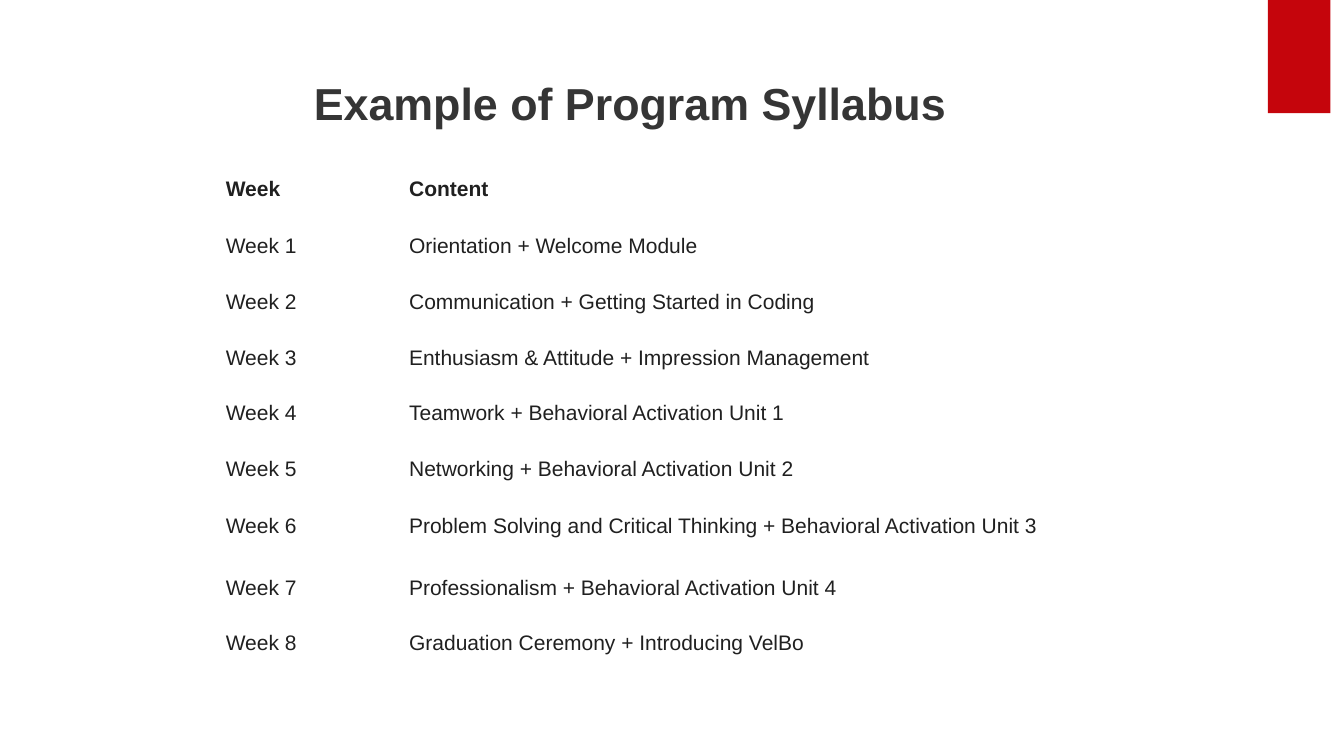
from pptx import Presentation
from pptx.dml.color import RGBColor
from pptx.enum.shapes import MSO_SHAPE
from pptx.enum.text import MSO_ANCHOR, PP_ALIGN
from pptx.util import Cm, Pt

RECTANGLE = MSO_SHAPE.RECTANGLE
BOTTOM = MSO_ANCHOR.BOTTOM
CENTER = PP_ALIGN.CENTER
RED = RGBColor(0xC5, 0x05, 0x0C)
TITLE_GRAY = RGBColor(0x35, 0x35, 0x35)
TEXT_GRAY = RGBColor(0x20, 0x20, 0x20)

CONTENTS = [
    "Orientation + Welcome Module",
    "Communication + Getting Started in Coding",
    "Enthusiasm & Attitude + Impression Management",
    "Teamwork + Behavioral Activation Unit 1",
    "Networking + Behavioral Activation Unit 2",
    "Problem Solving and Critical Thinking + Behavioral Activation Unit 3",
    "Professionalism + Behavioral Activation Unit 4",
    "Graduation Ceremony + Introducing VelBo",
]
ROWS = [("Week", "Content")]
ROWS += [(f"Week {n}", content) for n, content in enumerate(CONTENTS, 1)]
COLUMN_WIDTHS = [4.62, 18.36]
ROW_HEIGHTS = [1.43, 1.43, 1.4, 1.38, 1.43, 1.43, 1.55, 1.4, 1.43]


def write(p, text, spacing, size, color, bold):
    p.line_spacing = spacing
    r = p.add_run()
    r.text = text
    font = {"name": "Arial", "size": Pt(size), "bold": bold}
    for name, value in font.items():
        setattr(r.font, name, value)
    r.font.color.rgb = color


prs = Presentation()
prs.slide_width, prs.slide_height = Cm(33.87), Cm(19.05)
s = prs.slides.add_slide(prs.slide_layouts[6])

sp = s.shapes.add_shape(RECTANGLE, Cm(31.95), Cm(0), Cm(1.58), Cm(2.85))
sp.shadow.inherit = False
sp.fill.solid()
sp.fill.fore_color.rgb = RED
sp.line.fill.background()

sp = s.shapes.add_textbox(Cm(1.19), Cm(0.3), Cm(29.64), Cm(2.97))
tf = sp.text_frame
title_format = {
    "word_wrap": True,
    "vertical_anchor": BOTTOM,
    "margin_left": Cm(0),
    "margin_top": Cm(0.13),
    "margin_right": Cm(0.25),
    "margin_bottom": Cm(0),
}
for name, value in title_format.items():
    setattr(tf, name, value)
p = tf.paragraphs[0]
p.alignment = CENTER
write(p, "Example of Program Syllabus", 0.9, 32, TITLE_GRAY, True)

table = s.shapes.add_table(
    len(ROWS), len(COLUMN_WIDTHS), Cm(5.44), Cm(4.06),
    Cm(sum(COLUMN_WIDTHS)), Cm(sum(ROW_HEIGHTS)),
).table
table.first_row = False
table.horz_banding = False
for column, width in zip(table.columns, COLUMN_WIDTHS):
    column.width = Cm(width)
for row, height in zip(table.rows, ROW_HEIGHTS):
    row.height = Cm(height)

cell_format = {
    "margin_left": Cm(0.25),
    "margin_top": Cm(0.32),
    "margin_right": Cm(0.25),
    "margin_bottom": Cm(0.32),
}
for i, texts in enumerate(ROWS):
    for j, text in enumerate(texts):
        cell = table.cell(i, j)
        cell.fill.background()
        for name, value in cell_format.items():
            setattr(cell, name, value)
        write(cell.text_frame.paragraphs[0], text, 1.15, 15, TEXT_GRAY, i == 0)

prs.save("out.pptx")
